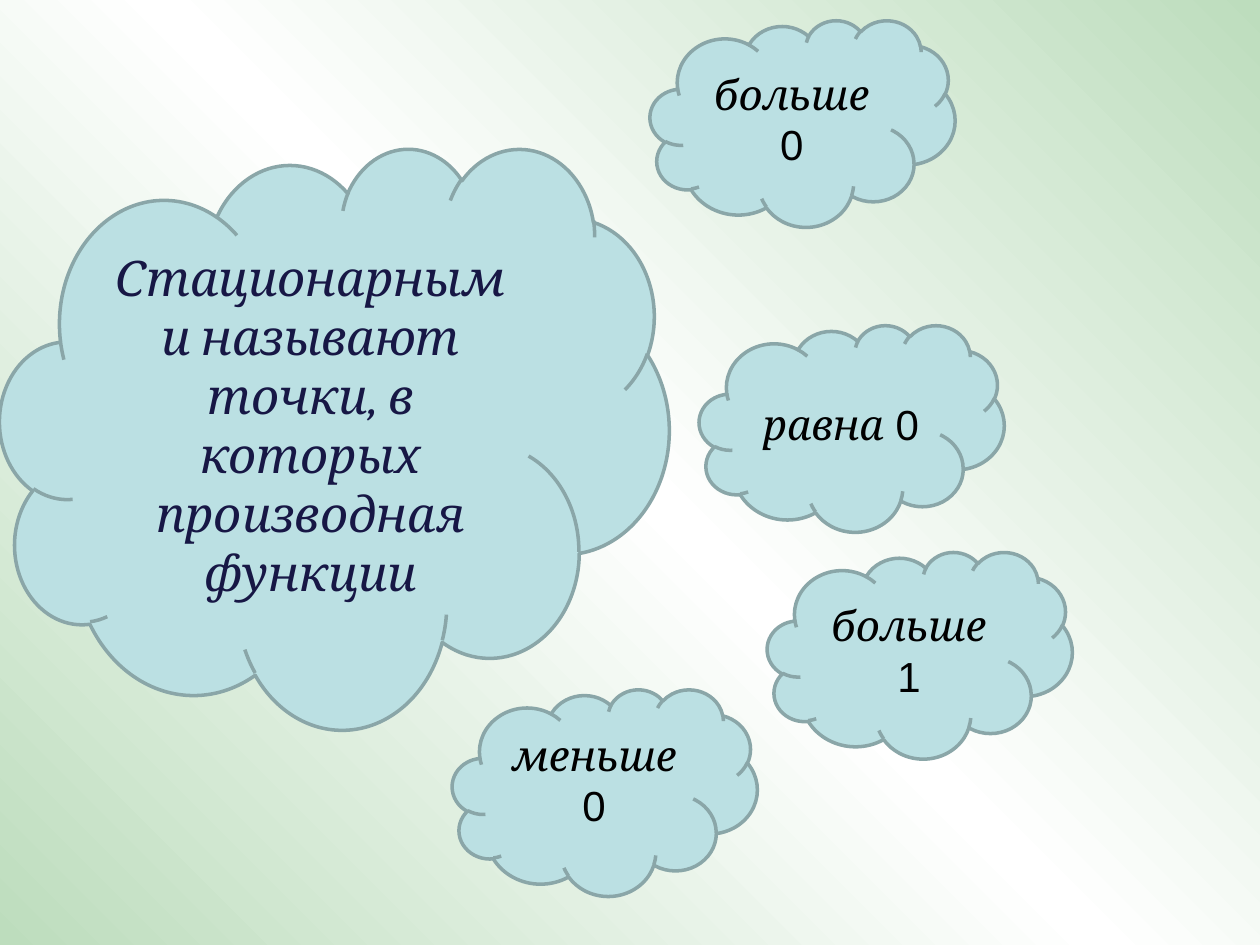
from copy import deepcopy
from dataclasses import dataclass

from pptx import Presentation
from pptx.dml.color import RGBColor
from pptx.enum import shapes, text
from pptx.util import Inches, Pt


@dataclass(frozen=True)
class Theme:
    """Colours, fonts and type sizes of the slide."""
    edge: RGBColor = RGBColor.from_string("BDDDBD")
    middle: RGBColor = RGBColor.from_string("FFFFFF")
    cloud: RGBColor = RGBColor.from_string("BBE0E3")
    outline: RGBColor = RGBColor.from_string("8AA6A8")
    question: RGBColor = RGBColor.from_string("171745")
    answer: RGBColor = RGBColor.from_string("000000")
    word_font: str = "Cambria"
    number_font: str = "Arial"
    question_size: Pt = Pt(28)
    answer_size: Pt = Pt(24)


THEME = Theme()
ANSWER_WIDTH, ANSWER_HEIGHT = 2.42, 1.64
ANSWERS = [
    (5.16, 0.16, "больше ", "0", 0.05),
    (5.55, 2.58, "равна", " 0", 0.05),
    (6.09, 4.38, "больше ", "1", 0.05),
    (3.59, 5.47, "меньше ", "0", 0.18),
]


def paint_background(slide):
    """Fill the slide with a diagonal green, white, green gradient."""
    fill = slide.background.fill
    fill.gradient()
    fill.gradient_angle = 45
    first_stop = slide.element.xpath(".//p:bg//a:gs")[0]
    middle_stop = deepcopy(first_stop)
    first_stop.addnext(middle_stop)
    colours = (THEME.edge, THEME.middle, THEME.edge)
    for stop, position, colour in zip(fill.gradient_stops, (0, 0.5, 1), colours):
        stop.position = position
        stop.color.rgb = colour


def format_run(run, font, size, colour, italic):
    """Set the typeface, size, colour and slant of a run."""
    run.font.name = font
    run.font.size = size
    run.font.color.rgb = colour
    run.font.italic = italic


def add_cloud(slide, box, words):
    """Place a cloud in the box and return its centred paragraph."""
    cloud = slide.shapes.add_shape(
        shapes.MSO_SHAPE.CLOUD, *(Inches(length) for length in box))
    cloud.shadow.inherit = False
    cloud.fill.solid()
    cloud.fill.fore_color.rgb = THEME.cloud
    cloud.line.color.rgb = THEME.outline
    cloud.line.width = Pt(2)
    frame = cloud.text_frame
    frame.text = words
    frame.word_wrap = True
    frame.vertical_anchor = text.MSO_ANCHOR.MIDDLE
    paragraph = frame.paragraphs[0]
    paragraph.alignment = text.PP_ALIGN.CENTER
    return frame, paragraph


def add_question(slide, box):
    """Place the cloud with the unfinished statement."""
    _, statement = add_cloud(
        slide, box, "Стационарными называют точки, в которых производная функции")
    format_run(statement.runs[0], THEME.word_font, THEME.question_size,
               THEME.question, True)


def add_answer(slide, box, relation, number, bottom_margin):
    """Place a cloud with one possible ending of the statement."""
    frame, ending = add_cloud(slide, box, relation)
    frame.margin_bottom = Inches(bottom_margin)
    ending.add_run().text = number
    relation_run, number_run = ending.runs
    format_run(relation_run, THEME.word_font, THEME.answer_size, THEME.answer, True)
    format_run(number_run, THEME.number_font, THEME.answer_size, THEME.answer, False)


def main():
    """Build the quiz slide and save it."""
    deck = Presentation()
    deck.slide_width, deck.slide_height = Inches(10), Inches(7.5)
    slide = deck.slides.add_slide(deck.slide_layouts[6])
    paint_background(slide)
    add_question(slide, (0, 1.17, 5.31, 4.61))
    for left, top, relation, number, bottom_margin in ANSWERS:
        add_answer(slide, (left, top, ANSWER_WIDTH, ANSWER_HEIGHT),
                   relation, number, bottom_margin)
    deck.save("out.pptx")


if __name__ == "__main__":
    main()
